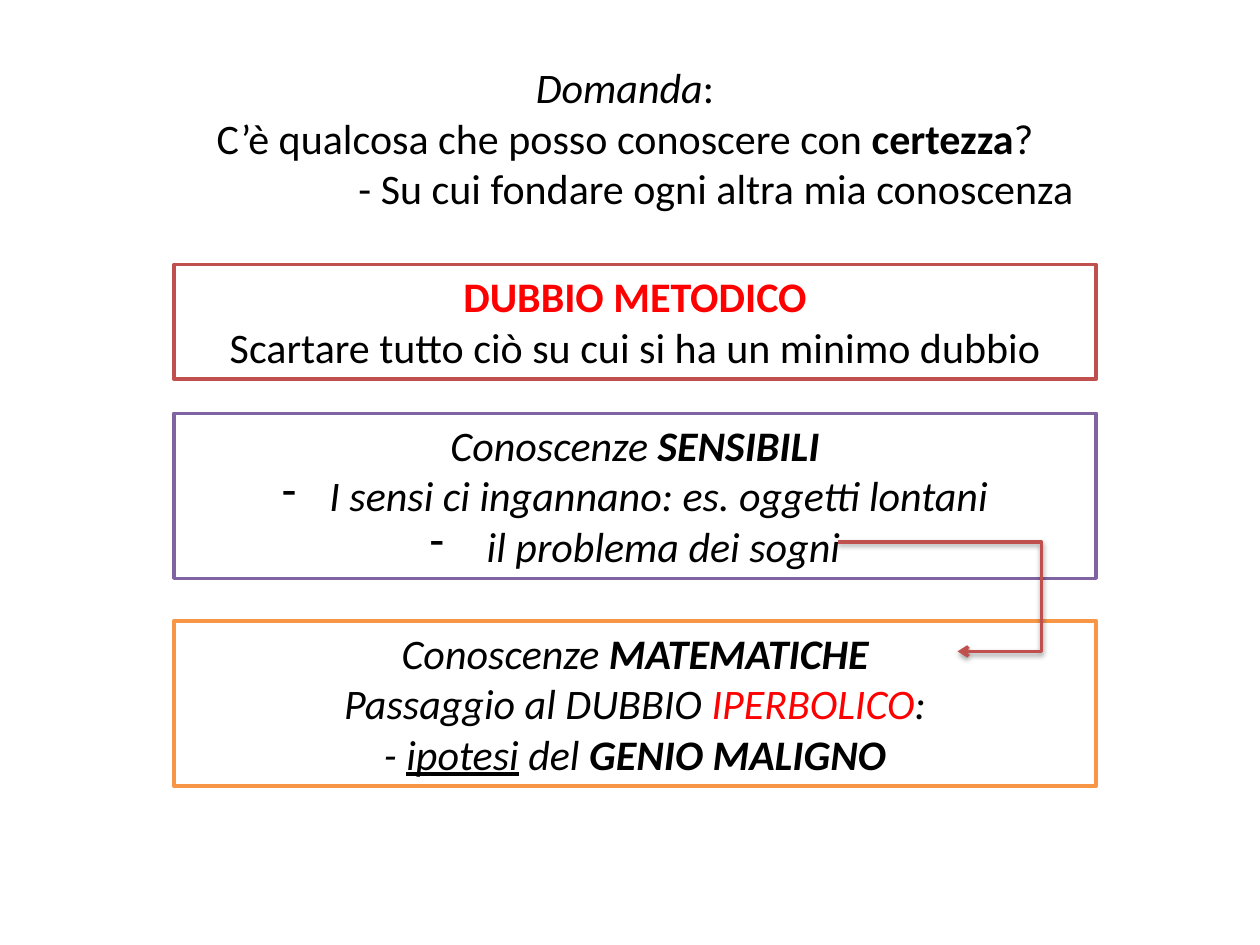
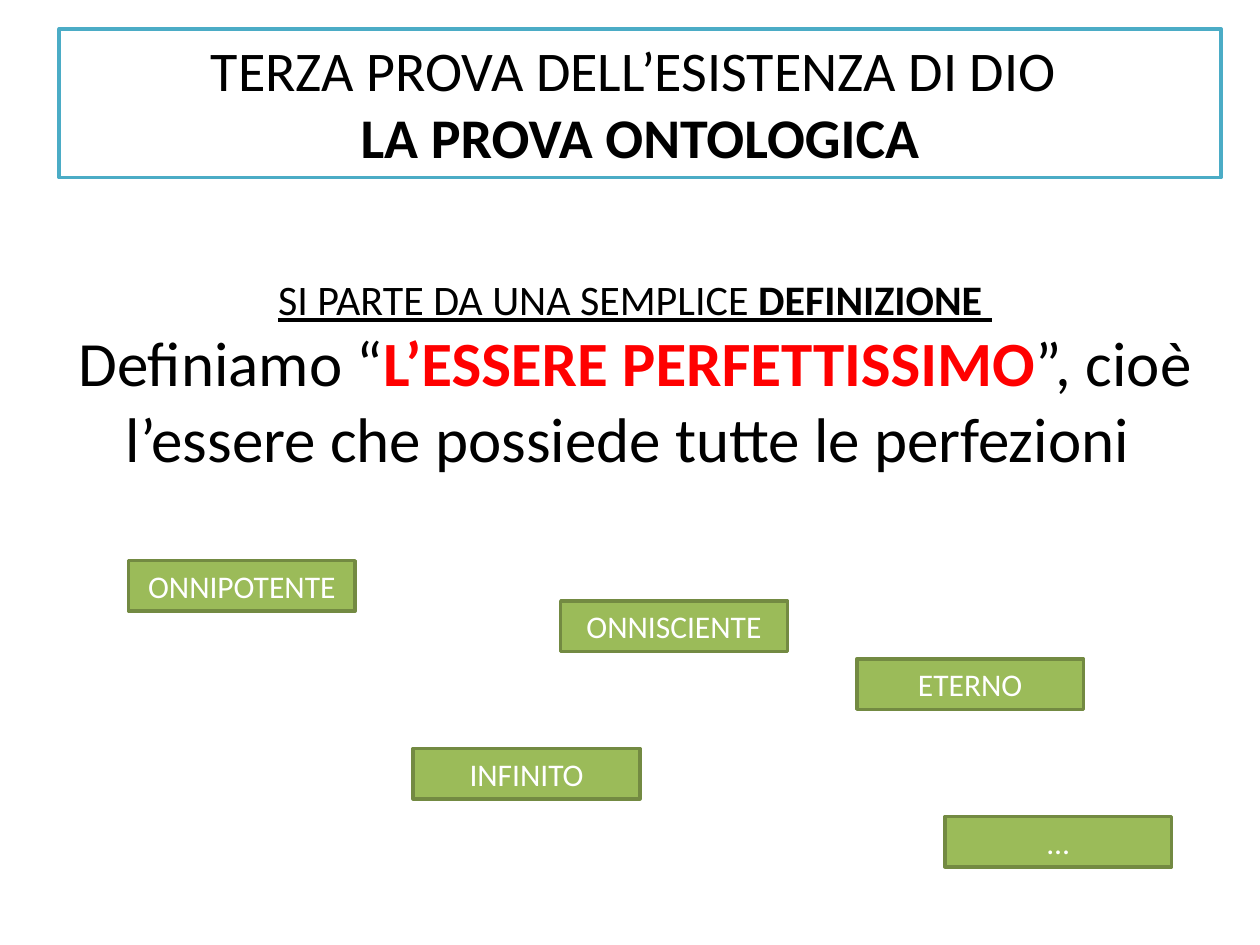
from dataclasses import dataclass, replace

from lxml import etree
from pptx import Presentation
from pptx import util as u
from pptx.dml import color
from pptx.enum import shapes, text
from pptx.oxml import ns

COLUMNS, ROWS = 100, 75
WIDTH, HEIGHT = u.Inches(10), u.Inches(7.5)
FONT = "Calibri"
BLACK, WHITE, RED = "000000", "FFFFFF", "FF0000"
BRICK, PURPLE, ORANGE, TEAL = "C0504D", "8064A2", "F79646", "4BACC6"
GREEN, DARK_GREEN = "9BBB59", "738A42"
LINE_WIDTH = u.Pt(2)
DASH_INDENT = 342900
CENTER, RIGHT = text.PP_ALIGN.CENTER, text.PP_ALIGN.RIGHT


@dataclass(frozen=True)
class Area:
    column: float
    row: float
    columns: float
    rows: float

    def lengths(self) -> tuple[int, int, int, int]:
        return across(self.column), down(self.row), across(self.columns), down(self.rows)


@dataclass(frozen=True)
class Words:
    wording: str
    size: int = 24
    ink: str = BLACK
    bold: bool = False
    italic: bool = False
    underline: bool = False


@dataclass(frozen=True)
class Line:
    words: tuple[Words, ...]
    align: text.PP_ALIGN = CENTER
    dashed: bool = False


@dataclass(frozen=True)
class Panel:
    area: Area
    lines: tuple[Line, ...]
    border: str
    fill: str = WHITE


def across(columns: float) -> int:
    return round(WIDTH * columns / COLUMNS)


def down(rows: float) -> int:
    return round(HEIGHT * rows / ROWS)


def rgb(value: str) -> color.RGBColor:
    return color.RGBColor.from_string(value)


def child(parent, tag: str, **attributes):
    return etree.SubElement(parent, ns.qn(tag), attributes)


def line(*words: Words, align: text.PP_ALIGN = CENTER, dashed: bool = False) -> Line:
    return Line(words, align, dashed)


def italic(wording: str, **style) -> Words:
    return Words(wording, italic=True, **style)


def write(shape, lines: tuple[Line, ...]) -> None:
    frame = shape.text_frame
    frame.word_wrap = True
    frame.auto_size = text.MSO_AUTO_SIZE.NONE
    frame.vertical_anchor = text.MSO_ANCHOR.TOP
    for index, content in enumerate(lines):
        paragraph = frame.add_paragraph() if index else frame.paragraphs[0]
        paragraph.alignment = content.align
        if content.dashed:
            properties = paragraph._p.get_or_add_pPr()
            properties.set("marL", str(DASH_INDENT))
            properties.set("indent", str(-DASH_INDENT))
            child(properties, "a:buFontTx")
            child(properties, "a:buChar", char="-")
        for words in content.words:
            run = paragraph.add_run()
            run.text = words.wording
            font = run.font
            font.name, font.size = FONT, u.Pt(words.size)
            font.bold, font.italic, font.underline = words.bold, words.italic, words.underline
            font.color.rgb = rgb(words.ink)


def paint(shape, border: str, fill: str) -> None:
    shape.fill.solid()
    shape.fill.fore_color.rgb = rgb(fill)
    shape.line.color.rgb = rgb(border)
    shape.line.width = LINE_WIDTH


def draw_panel(slide, panel: Panel) -> None:
    shape = slide.shapes.add_shape(shapes.MSO_SHAPE.RECTANGLE, *panel.area.lengths())
    shape.shadow.inherit = False
    paint(shape, panel.border, panel.fill)
    write(shape, panel.lines)


def place_title(slide, area: Area, lines: tuple[Line, ...]):
    title = slide.shapes.title
    title.left, title.top, title.width, title.height = area.lengths()
    write(title, lines)
    return title


def draw_dream_arrow(slide) -> None:
    arrow = slide.shapes.add_connector(
        shapes.MSO_CONNECTOR.ELBOW, across(66.5), down(43), across(76), down(51.7))
    arrow.line.color.rgb = rgb(BRICK)
    arrow.line.width = LINE_WIDTH
    properties = arrow._element.spPr
    adjustments = properties.find(".//" + ns.qn("a:avLst"))
    child(adjustments, "a:gd", name="adj1", fmla="val 170000")
    child(arrow.line._get_or_add_ln(), "a:tailEnd", type="arrow")
    shadow = child(child(properties, "a:effectLst"), "a:outerShdw",
                   blurRad=str(u.Pt(3.1)), dist=str(u.Pt(1.6)), dir="5400000", rotWithShape="0")
    child(child(shadow, "a:srgbClr", val=BLACK), "a:alpha", val="38000")


def build_doubt(slide) -> None:
    place_title(slide, Area(13, 4.4, 73.2, 13.1), (
        line(italic("Domanda"), Words(":")),
        line(Words("C’è qualcosa che posso conoscere con "),
             Words("certezza", bold=True), Words("?")),
        line(Words("- Su cui fondare ogni altra mia conoscenza"), align=RIGHT),
    ))
    method = Area(13.8, 21, 73.2, 9.1)
    senses = replace(method, row=32.8, rows=13.1)
    mathematics = replace(senses, row=49.3)
    for panel in (
        Panel(method, (
            line(Words("DUBBIO METODICO", ink=RED, bold=True)),
            line(Words("Scartare tutto ciò su cui si ha un minimo dubbio")),
        ), BRICK),
        Panel(senses, (
            line(italic("Conoscenze "), italic("SENSIBILI", bold=True)),
            line(italic("I sensi ci ingannano: es. oggetti lontani"), dashed=True),
            line(italic(" il problema dei sogni"), dashed=True),
        ), PURPLE),
        Panel(mathematics, (
            line(italic("Conoscenze "), italic("MATEMATICHE", bold=True)),
            line(italic("Passaggio al DUBBIO "), italic("IPERBOLICO", ink=RED), italic(":")),
            line(italic("- "), italic("ipotesi", underline=True), italic(" del "),
                 italic("GENIO MALIGNO", bold=True)),
        ), ORANGE),
    ):
        draw_panel(slide, panel)
    draw_dream_arrow(slide)


def build_ontological_proof(slide) -> None:
    title = place_title(slide, Area(4.7, 2.3, 92.2, 11.8), (
        line(Words("TERZA PROVA DELL’ESISTENZA DI DIO ", size=32)),
        line(Words("LA PROVA ONTOLOGICA", size=32, bold=True)),
    ))
    paint(title, TEAL, WHITE)
    definition = slide.shapes.add_textbox(*Area(5.1, 21.2, 90.6, 17.1).lengths())
    write(definition, (
        line(Words("SI PARTE DA UNA SEMPLICE ", underline=True),
             Words("DEFINIZIONE", bold=True, underline=True), Words(" ", underline=True)),
        line(Words("Definiamo “", size=36),
             Words("L’ESSERE PERFETTISSIMO", size=36, ink=RED, bold=True),
             Words("”, cioè l’essere che possiede tutte le perfezioni ", size=36)),
    ))
    for perfection, column, row in (
        ("ONNIPOTENTE", 10.2, 44.5),
        ("ONNISCIENTE", 44.5, 47.7),
        ("INFINITO", 32.8, 59.4),
        ("ETERNO", 68, 52.3),
        ("…", 75, 64.8),
    ):
        label = line(Words(perfection, size=18, ink=WHITE))
        draw_panel(slide, Panel(Area(column, row, 18, 4), (label,), DARK_GREEN, GREEN))


def main() -> None:
    deck = Presentation()
    deck.slide_width, deck.slide_height = WIDTH, HEIGHT
    title_only = deck.slide_layouts.get_by_name("Title Only")
    for build in (build_doubt, build_ontological_proof):
        build(deck.slides.add_slide(title_only))
    deck.save("out.pptx")


if __name__ == "__main__":
    main()
